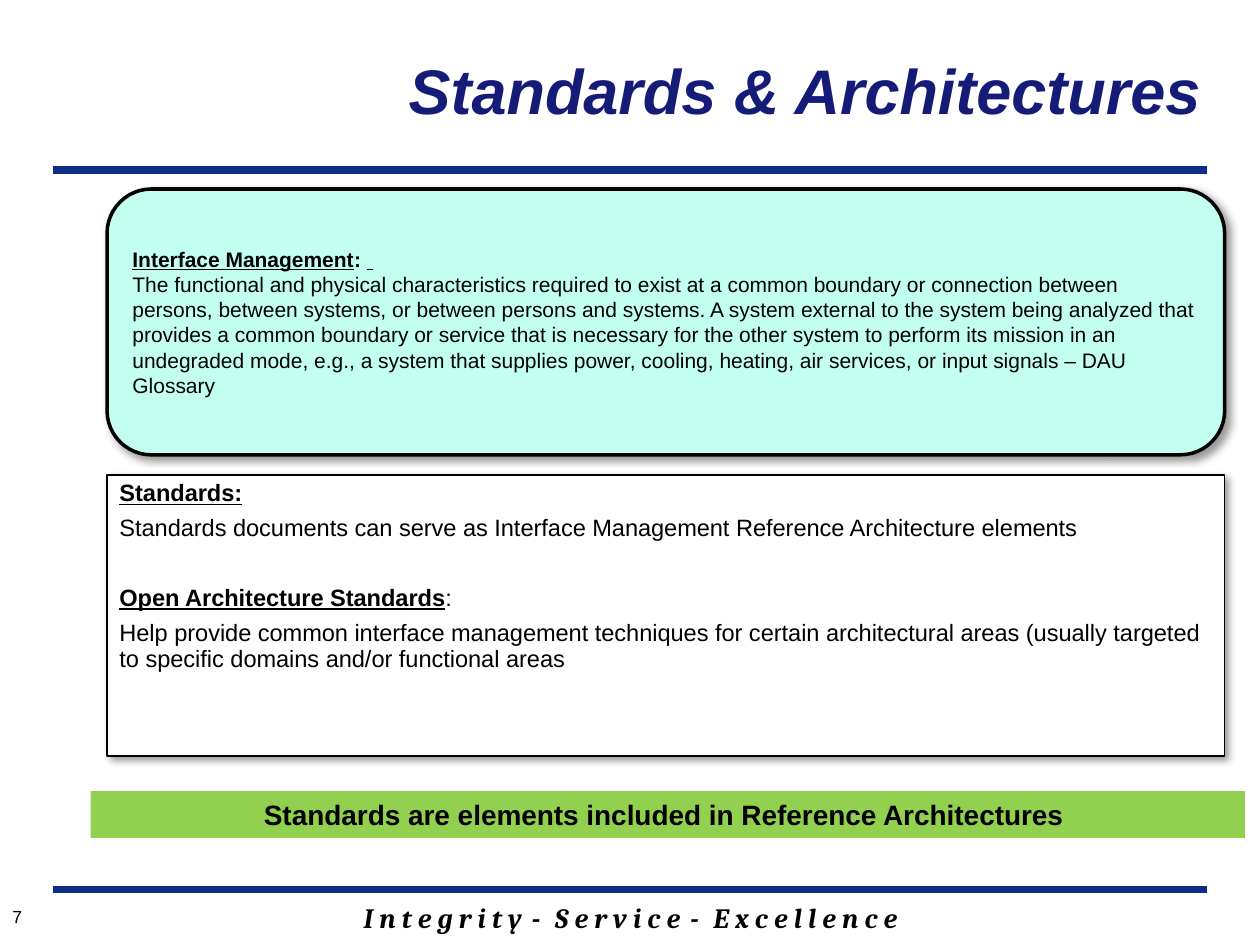
from lxml import etree
from pptx import Presentation
from pptx.dml.color import RGBColor
from pptx.enum.shapes import MSO_CONNECTOR, MSO_SHAPE
from pptx.enum.text import MSO_ANCHOR as ANCHOR, PP_ALIGN as ALIGN
from pptx.oxml.ns import qn
from pptx.util import Inches, Pt

BLACK, WHITE, NAVY, RULE_BLUE = "000000", "FFFFFF", "151C77", "0C2D83"
MINT, GREEN = "C2FFF0", "92D050"
HEADING = {"bold": True, "underline": True}


def rgb(value):
    return RGBColor.from_string(value)


def write(frame, paragraphs, size, color=BLACK, font="Arial", align=ALIGN.LEFT,
          anchor=ANCHOR.TOP, before=None, line_spacing=None):
    """Fill a frame; each paragraph is a list of (text, font settings) runs."""
    frame.word_wrap = True
    frame.vertical_anchor = anchor
    for index, runs in enumerate(paragraphs):
        paragraph = frame.add_paragraph() if index else frame.paragraphs[0]
        paragraph.alignment = align
        if index and before:
            paragraph.space_before = Pt(before)
        if line_spacing:
            paragraph.line_spacing = line_spacing
        for text, settings in runs:
            run = paragraph.add_run()
            run.text = text
            run.font.name, run.font.size = font, Pt(size)
            run.font.color.rgb = rgb(color)
            for key, value in settings.items():
                setattr(run.font, key, value)


def add_text(slide, box, *args, **kwargs):
    frame = slide.shapes.add_textbox(*map(Inches, box)).text_frame
    write(frame, *args, **kwargs)
    return frame


def add_panel(slide, preset, box, fill, line_width=None):
    panel = slide.shapes.add_shape(preset, *map(Inches, box))
    panel.shadow.inherit = False
    panel.fill.solid()
    panel.fill.fore_color.rgb = rgb(fill)
    if line_width:
        panel.line.color.rgb = rgb(BLACK)
        panel.line.width = Pt(line_width)
    else:
        panel.line.fill.background()
    return panel


def add_shadow(panel):
    effects = panel._element.spPr.find(qn("a:effectLst"))
    shadow = etree.SubElement(effects, qn("a:outerShdw"), blurRad=str(Pt(4)),
                              dist=str(Pt(3)), dir="2700000", algn="tl", rotWithShape="0")
    color = etree.SubElement(shadow, qn("a:srgbClr"), val=BLACK)
    etree.SubElement(color, qn("a:alpha"), val="40000")


def add_rule(slide, left, right, y):
    rule = slide.shapes.add_connector(
        MSO_CONNECTOR.STRAIGHT, Inches(left), Inches(y), Inches(right), Inches(y))
    rule.line.color.rgb = rgb(RULE_BLUE)
    rule.line.width = Pt(4.5)
    etree.SubElement(rule._element.spPr, qn("a:effectLst"))


def add_motto(slide, box):
    dash = " - "
    words = ["I n t e g r i t y", dash, "S e r v i c e", dash, "E x c e l l e n c e"]
    style = {"bold": True, "italic": True}
    frame = add_text(slide, box, [[(word, style) for word in words]], 16,
                     font="Cambria", align=ALIGN.CENTER)
    for run in frame.paragraphs[0].runs:
        if run.text == dash:
            run.font._element.set("spc", "235")


def add_interface_definition(slide, box):
    panel = add_panel(slide, MSO_SHAPE.ROUNDED_RECTANGLE, box, MINT, 2)
    add_shadow(panel)
    write(panel.text_frame, [
        [("Interface Management", HEADING), (": ", {"bold": True}), (" ", HEADING)],
        [("The functional and physical characteristics required to exist at a common "
          "boundary or connection between persons, between systems, or between persons "
          "and systems. A system external to the system being analyzed that provides a "
          "common boundary or service that is necessary for the other system to perform "
          "its mission in an undegraded mode, e.g., a system that supplies power, cooling, "
          "heating, air services, or input signals – DAU Glossary", {})],
    ], 12, anchor=ANCHOR.MIDDLE)


def add_standards(slide, box):
    panel = add_panel(slide, MSO_SHAPE.RECTANGLE, box, WHITE, 0.75)
    add_shadow(panel)
    frame = panel.text_frame
    write(frame, [
        [("Standards:", HEADING)],
        [("Standards documents can serve as Interface Management Reference "
          "Architecture elements", {})],
        [("Open Architecture Standards", HEADING), (":", {})],
        [("Help provide common interface management techniques for certain architectural "
          "areas (usually targeted to specific domains and/or functional areas", {})],
    ], 13.5, before=5.6, line_spacing=0.9)
    frame.paragraphs[2].space_before = Pt(25.2)


def add_takeaway(slide, box):
    banner = add_panel(slide, MSO_SHAPE.RECTANGLE, box, GREEN)
    write(banner.text_frame,
          [[("Standards are elements included in Reference Architectures ", {"bold": True})]],
          16, align=ALIGN.CENTER)


def main():
    deck = Presentation()
    deck.slide_width, deck.slide_height = Inches(10), Inches(7.5)
    slide = deck.slides.add_slide(deck.slide_layouts[6])
    add_motto(slide, (1.42, 7.1, 7.17, 0.37))
    for y in (7.06, 1.35):
        add_rule(slide, 0.42, 9.58, y)
    add_interface_definition(slide, (0.85, 1.5, 8.87, 2.11))
    add_text(slide, (0, 7.14, 1.33, 0.33), [[("7", {})]], 10)
    add_standards(slide, (0.85, 3.77, 8.87, 2.23))
    add_text(slide, (1.82, 0.08, 7.81, 1.25),
             [[("Standards & Architectures", {"bold": True, "italic": True})]],
             36, color=NAVY, align=ALIGN.RIGHT, anchor=ANCHOR.MIDDLE)
    add_takeaway(slide, (0.72, 6.28, 9.16, 0.37))
    deck.save("out.pptx")


if __name__ == "__main__":
    main()
